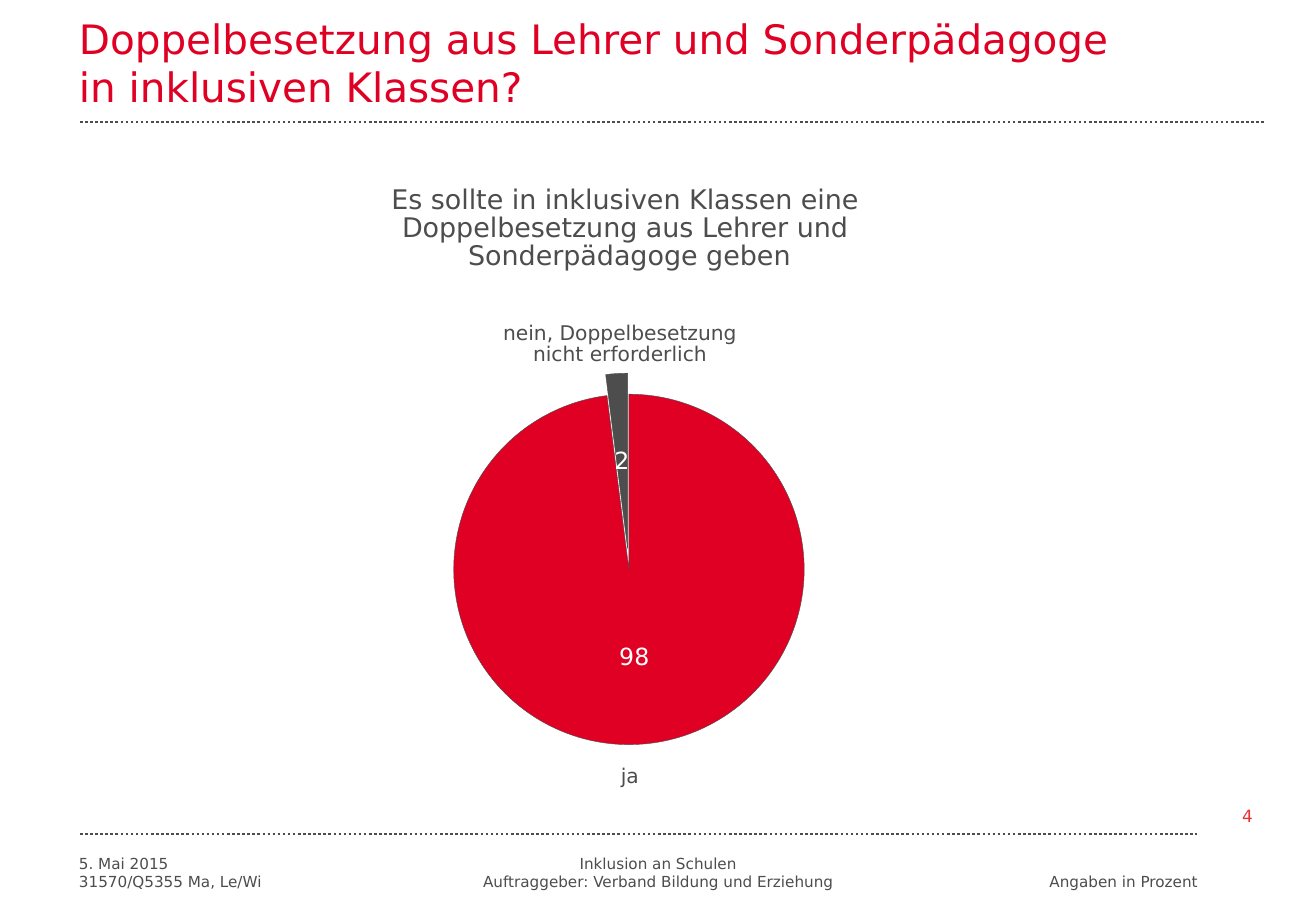
from lxml.etree import SubElement
from pptx import Presentation
from pptx.chart.data import CategoryChartData
from pptx.dml.color import RGBColor
from pptx.enum.chart import XL_CHART_TYPE as ChartType, XL_LABEL_POSITION as LabelPosition
from pptx.enum.dml import MSO_LINE as Dash
from pptx.enum.shapes import MSO_CONNECTOR as Connector
from pptx.enum.text import MSO_ANCHOR as Anchor, MSO_AUTO_SIZE as AutoSize, PP_ALIGN as Align
from pptx.oxml import parse_xml
from pptx.oxml.ns import nsdecls, qn
from pptx.util import Pt

COLORS = {"red": "DF0024", "gray": "4D4D4D", "page": "E73137", "white": "FFFFFF"}
FONT = "DejaVu Sans"
EMU_PER_PX = 914400 / 121.5


def px(length):
    return round(length * EMU_PER_PX)


def color(name):
    return RGBColor.from_string(COLORS[name])


class SlideBuilder:
    def __init__(self, slide):
        self.slide = slide
        self.shapes = slide.shapes

    def text(self, box, lines, size, ink="gray", align=Align.LEFT, anchor=Anchor.TOP,
             spacing=None, inset=True):
        frame = self.shapes.add_textbox(*map(px, box)).text_frame
        frame.word_wrap = not inset
        frame.vertical_anchor = anchor
        if inset:
            frame.auto_size = AutoSize.SHAPE_TO_FIT_TEXT
        else:
            frame.margin_left = frame.margin_right = frame.margin_top = frame.margin_bottom = 0
        for index, line in enumerate(lines):
            paragraph = frame.add_paragraph() if index else frame.paragraphs[0]
            paragraph.alignment = align
            if spacing:
                paragraph.line_spacing = spacing
            run = paragraph.add_run()
            run.text = line
            run.font.name = FONT
            run.font.size = Pt(size)
            run.font.color.rgb = color(ink)

    def dotted_rule(self, left, right, y):
        rule = self.shapes.add_connector(Connector.STRAIGHT, px(left), px(y), px(right), px(y))
        rule.line.color.rgb = color("gray")
        rule.line.width = Pt(1.5)
        rule.line.dash_style = Dash.ROUND_DOT
        SubElement(rule.element.spPr, qn("a:effectLst"))

    def pie(self, box, values, slice_colors, layout, explosion):
        """Add a pie; layout gives the inner plot area as fractions of the chart."""
        data = CategoryChartData()
        data.categories = [str(number) for number in range(1, len(values) + 1)]
        data.add_series("Series 1", values)
        chart = self.shapes.add_chart(ChartType.PIE, *map(px, box), data).chart
        chart.has_legend = False
        chart.has_title = False
        chart.font.name = FONT
        chart.font.size = Pt(18)
        chart.font.color.rgb = color("red")

        plot = chart.plots[0]
        plot.vary_by_categories = True
        answers = plot.series[0]
        self.outline(answers.format.line)
        for index, name in slice_colors.items():
            answer = answers.points[index].format
            answer.fill.solid()
            answer.fill.fore_color.rgb = color(name)
            self.outline(answer.line)

        labels = answers.data_labels
        labels.show_value = True
        labels.position = LabelPosition.CENTER
        labels.font.name = FONT
        labels.font.size = Pt(14)
        labels.font.color.rgb = color("white")

        answers.format.line._get_or_add_ln().getparent().addnext(
            parse_xml(f'<c:explosion {nsdecls("c")} val="{explosion}"/>'))
        self.place_plot(chart, layout)

    @staticmethod
    def outline(line):
        line.color.rgb = color("gray")
        line.width = Pt(0.25)

    @staticmethod
    def place_plot(chart, layout):
        area = chart.element.find(".//" + qn("c:plotArea"))
        for automatic in area.findall(qn("c:layout")):
            area.remove(automatic)
        settings = [("layoutTarget", "inner"), ("xMode", "edge"), ("yMode", "edge"),
                    *zip("xywh", layout)]
        entries = "".join(f'<c:{tag} val="{value}"/>' for tag, value in settings)
        area.insert(0, parse_xml(f'<c:layout {nsdecls("c")}><c:manualLayout>{entries}'
                                 '</c:manualLayout></c:layout>'))


def main():
    deck = Presentation()
    deck.slide_width, deck.slide_height = px(1316), px(911)
    page = SlideBuilder(deck.slides.add_slide(deck.slide_layouts[6]))

    page.dotted_rule(80, 1265, 122)
    page.dotted_rule(80, 1197, 834)
    page.text((467, 848, 382, 49),
              ["Inklusion an Schulen", "Auftraggeber: Verband Bildung und Erziehung"],
              9, align=Align.CENTER)
    page.text((1221, 792, 53, 47), ["4"], 10, "page", Align.CENTER, Anchor.MIDDLE, inset=False)
    page.text((67, 848, 214, 49), ["5. Mai 2015", "31570/Q5355 Ma, Le/Wi"], 9)
    page.text((67, 6, 1058, 111),
              ["Doppelbesetzung aus Lehrer und Sonderpädagoge", "in inklusiven Klassen?"],
              24, "red", anchor=Anchor.BOTTOM)

    page.pie((360, 333, 516, 481), [98, None, 2, None, None, None, None],
             {0: "red", 2: "gray"}, (0.16, 0.08, 0.72, 0.78), explosion=6)
    page.text((609, 757, 44, 36), ["ja"], 12)
    page.text((490, 318, 260, 53), ["nein, Doppelbesetzung", "nicht erforderlich"],
              12, align=Align.CENTER, spacing=0.85)
    page.text((375, 182, 509, 96),
              ["Es sollte in inklusiven Klassen eine ", "Doppelbesetzung aus Lehrer und ",
               "Sonderpädagoge geben"],
              16, align=Align.CENTER, spacing=0.85)
    page.text((1036, 866, 175, 30), ["Angaben in Prozent"], 9, align=Align.CENTER)

    deck.save("out.pptx")


if __name__ == "__main__":
    main()
